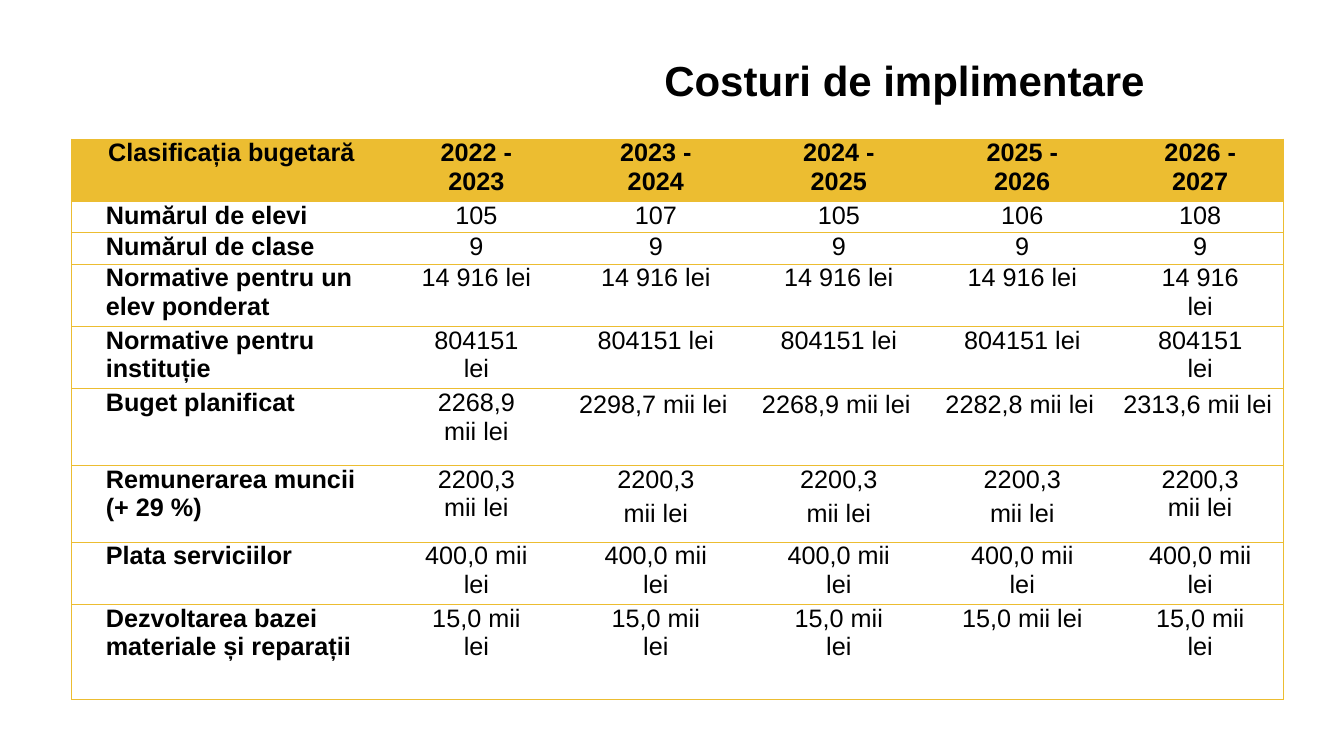
from lxml.etree import fromstring
from pptx import Presentation
from pptx.dml.color import RGBColor
from pptx.enum.text import MSO_ANCHOR, PP_ALIGN
from pptx.oxml.ns import nsdecls
from pptx.util import Inches, Pt

TITLE = "Costuri de implimentare"
HEADER = ["Clasificația bugetară", "2022 - 2023", "2023 - 2024",
          "2024 - 2025", "2025 - 2026", "2026 - 2027"]
PAY, PAY_SPLIT = "2200,3 mii lei", "2200,3\nmii lei"
BUDGET = "Buget planificat"
ROWS = [
    HEADER,
    ["Numărul de elevi", "105", "107", "105", "106", "108"],
    ["Numărul de clase"] + ["9"] * 5,
    ["Normative pentru un elev ponderat"] + ["14 916 lei"] * 5,
    ["Normative pentru instituție"] + ["804151 lei"] * 5,
    [BUDGET, "2268,9 mii lei", "2298,7 mii lei", "2268,9 mii lei",
     "2282,8 mii lei", "2313,6 mii lei"],
    ["Remunerarea muncii (+ 29 %)", PAY, PAY_SPLIT, PAY_SPLIT, PAY_SPLIT, PAY],
    ["Plata serviciilor"] + ["400,0 mii lei"] * 5,
    ["Dezvoltarea bazei materiale și reparații"] + ["15,0 mii lei"] * 5,
]
COLUMN_WIDTHS = [3.12, 1.74, 1.82, 1.81, 1.83, 1.7]
ROW_HEIGHTS = [0.62, 0.31, 0.31, 0.62, 0.62, 0.76, 0.76, 0.62, 0.94]
COLORS = {"gold": "ECBD31", "text": "000000"}
FONT = "Arial"


def add_run(paragraph, text, size, bold):
    run = paragraph.add_run()
    run.text = text
    run.font.name, run.font.size, run.font.bold = FONT, Pt(size), bold
    run.font.color.rgb = RGBColor.from_string(COLORS["text"])


def indent(paragraph, **lengths):
    properties = paragraph._p.get_or_add_pPr()
    for name, inches in lengths.items():
        properties.set(name, str(Inches(inches)))


def set_borders(cell, sides):
    """Draw gold lines on the given sides (letters of LRTB) and clear the others."""
    gold = f'<a:solidFill><a:srgbClr val="{COLORS["gold"]}"/></a:solidFill>'
    for place, side in enumerate("LRTB"):
        fill = gold if side in sides else "<a:noFill/>"
        line = fromstring(f'<a:ln{side} {nsdecls("a")} w="{Pt(0.75)}">{fill}</a:ln{side}>')
        cell._tc.get_or_add_tcPr().insert(place, line)


def fill_cell(cell, text, row, column):
    cell.margin_left = cell.margin_right = Inches(0.04)
    cell.margin_top = cell.margin_bottom = 0
    if row == 0:
        cell.fill.solid()
        cell.fill.fore_color.rgb = RGBColor.from_string(COLORS["gold"])
    else:
        cell.fill.background()
    last = len(HEADER) - 1
    set_borders(cell, "TB" + {0: "L", last: "R"}.get(column, ""))

    flush = ROWS[row][0] == BUDGET and column > 1
    for number, line in enumerate(text.split("\n")):
        frame = cell.text_frame
        paragraph = frame.add_paragraph() if number else frame.paragraphs[0]
        paragraph.alignment = PP_ALIGN.LEFT if row and not column else PP_ALIGN.CENTER
        if flush:
            paragraph.line_spacing = 1.07
        else:
            indent(paragraph, marL=0.3, marR=0.25, indent=0)
        if number:
            paragraph.space_before = Pt(4.5)
        add_run(paragraph, line, 18, row == 0 or column == 0)


def add_title(slide):
    frame = slide.shapes.add_textbox(
        Inches(6.29), Inches(0.49), Inches(5.44), Inches(0.89)).text_frame
    frame.word_wrap = True
    frame.vertical_anchor = MSO_ANCHOR.TOP
    indent(frame.paragraphs[0], marL=0, indent=0.2)
    add_run(frame.paragraphs[0], TITLE, 30, True)


def add_costs(slide):
    table = slide.shapes.add_table(
        len(ROWS), len(HEADER), Inches(0.71), Inches(1.38),
        Inches(sum(COLUMN_WIDTHS)), Inches(sum(ROW_HEIGHTS))).table
    table.first_row = table.horz_banding = False
    for column, width in zip(table.columns, COLUMN_WIDTHS):
        column.width = Inches(width)
    for row, height in zip(table.rows, ROW_HEIGHTS):
        row.height = Inches(height)
    for row, texts in enumerate(ROWS):
        for column, text in enumerate(texts):
            fill_cell(table.cell(row, column), text, row, column)


def main():
    deck = Presentation()
    deck.slide_width, deck.slide_height = Inches(13.33), Inches(7.5)
    slide = deck.slides.add_slide(deck.slide_layouts[6])
    add_costs(slide)
    add_title(slide)
    deck.save("out.pptx")


if __name__ == "__main__":
    main()
